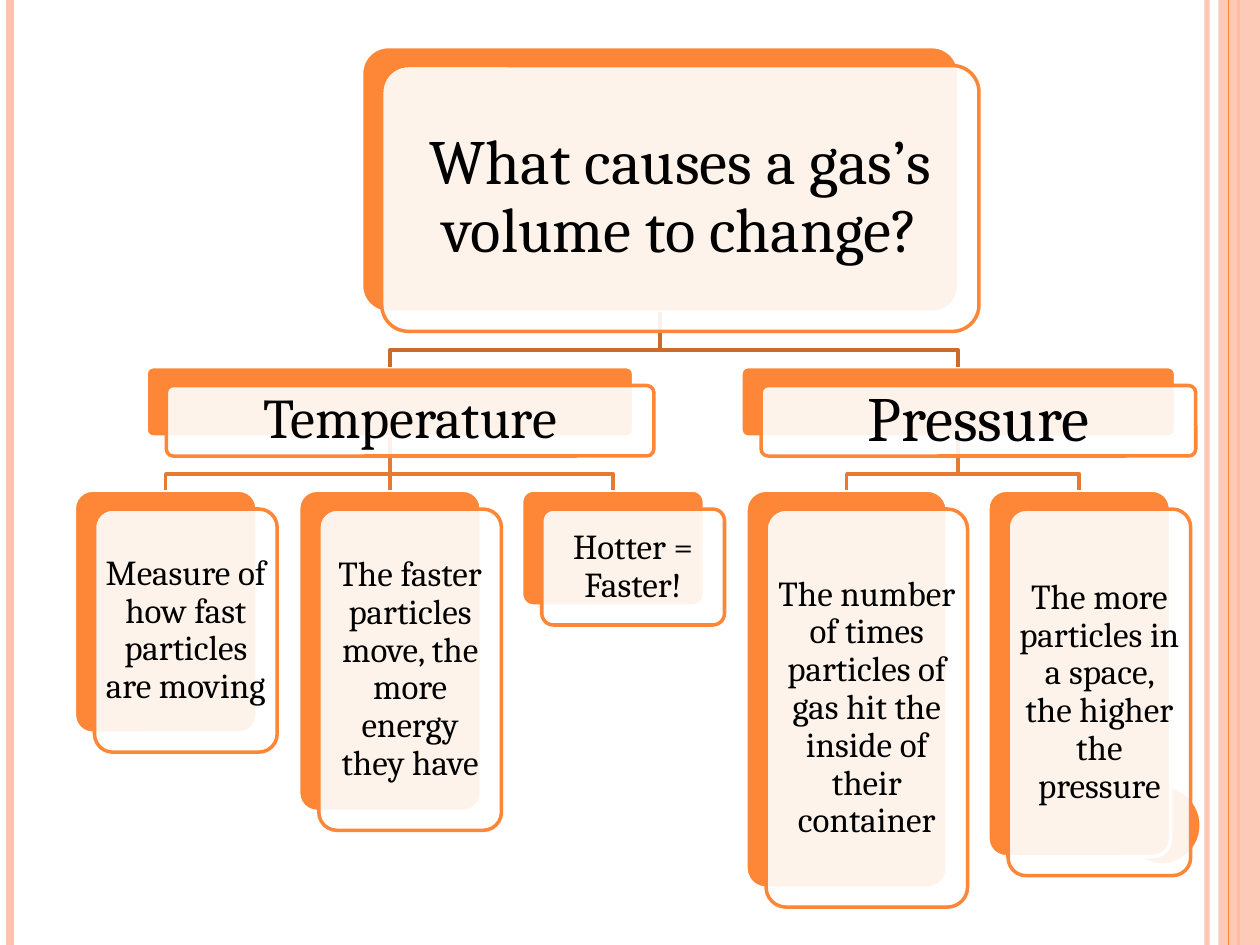
"""Build a slide with a tree of cards on what changes the volume of a gas."""
from dataclasses import dataclass
from typing import Optional

from lxml.etree import SubElement
from pptx import Presentation
from pptx.dml.color import RGBColor
from pptx.enum.shapes import MSO_CONNECTOR as Link, MSO_SHAPE as Preset
from pptx.enum.text import MSO_ANCHOR as Anchor, MSO_AUTO_SIZE as AutoSize, PP_ALIGN as Align
from pptx.oxml.ns import qn
from pptx.util import Inches, Pt

ORANGE = RGBColor(0xFE, 0x86, 0x37)
PEACH = RGBColor(0xFE, 0xC3, 0xAE)
UPPER_LINK = RGBColor(0xCB, 0x6B, 0x2C)
LOWER_LINK = RGBColor(0xE7, 0x7A, 0x32)
WHITE = RGBColor(0xFF, 0xFF, 0xFF)
BLACK = RGBColor(0, 0, 0)

FONT = "Cambria"
PAGE_WIDTH, PAGE_HEIGHT = 10, 7.5
SHIFT_X, SHIFT_Y = 0.16, 0.15
CORNER = 0.1
BEND = 0.13
LEAF_TOP = 3.89
BRANCH_TOP, BRANCH_HEIGHT = 2.91, 0.56


@dataclass
class Card:
    text: str
    left: float
    top: float
    width: float
    height: float
    size: int = 20
    inset: float = 0.08
    parent: Optional["Card"] = None

    @property
    def center(self) -> float:
        return self.left + self.width / 2

    @property
    def bottom(self) -> float:
        return self.top + self.height


@dataclass
class Rail:
    x: float
    color: RGBColor
    weight: float
    opacity: int = 100


ROOT = Card("What causes a gas’s volume to change?", 2.87, 0.37, 4.74, 2.11, 36, 0.15)
TEMPERATURE = Card("Temperature", 1.16, BRANCH_TOP, 3.87, BRANCH_HEIGHT, 32, 0.13, ROOT)
PRESSURE = Card("Pressure", 5.88, BRANCH_TOP, 3.45, BRANCH_HEIGHT, 36, 0.15, ROOT)


def leaf(text: str, left: float, width: float, height: float, parent: Card) -> Card:
    return Card(text, left, LEAF_TOP, width, height, parent=parent)


CARDS = [
    ROOT,
    TEMPERATURE,
    leaf("Measure of how fast particles are moving", 0.59, 1.45, 1.93, TEMPERATURE),
    leaf("The faster particles move, the more energy they have", 2.37, 1.45, 2.55, TEMPERATURE),
    leaf("Hotter = Faster!", 4.14, 1.45, 0.92, TEMPERATURE),
    PRESSURE,
    leaf("The number of times particles of gas hit the inside of their container",
         5.92, 1.6, 3.16, PRESSURE),
    leaf("The more particles in a space, the higher the pressure", 7.84, 1.45, 2.91, PRESSURE),
]
RAILS = [Rail(9.58, PEACH, 3, 93), Rail(0.08, PEACH, 4.5), Rail(9.83, ORANGE, 1.5)]
EDGE_RAIL = Rail(9.75, ORANGE, 0.75)


def set_opacity(shape, percent: int) -> None:
    color = next(shape.element.iter(qn("a:srgbClr")))
    SubElement(color, qn("a:alpha")).set("val", str(percent * 1000))


def add_line(page, x1: float, y1: float, x2: float, y2: float, color: RGBColor, weight: float):
    line = page.shapes.add_connector(Link.STRAIGHT, Inches(x1), Inches(y1), Inches(x2), Inches(y2))
    line.line.color.rgb = color
    line.line.width = Pt(weight)
    SubElement(line.element.spPr, qn("a:effectLst"))
    return line


def add_rail(page, rail: Rail) -> None:
    line = add_line(page, rail.x, 0, rail.x, PAGE_HEIGHT, rail.color, rail.weight)
    if rail.opacity < 100:
        set_opacity(line, rail.opacity)


def add_shape(page, preset, left: float, top: float, width: float, height: float,
              fill: RGBColor, outline: Optional[RGBColor] = None):
    shape = page.shapes.add_shape(preset, Inches(left), Inches(top), Inches(width), Inches(height))
    shape.shadow.inherit = False
    shape.fill.solid()
    shape.fill.fore_color.rgb = fill
    if outline is None:
        shape.line.fill.background()
    else:
        shape.line.color.rgb = outline
        shape.line.width = Pt(2)
    return shape


def add_back(page, card: Card):
    back = add_shape(page, Preset.ROUNDED_RECTANGLE, card.left, card.top,
                     card.width, card.height, ORANGE, WHITE)
    back.adjustments[0] = CORNER
    return back


def add_front(page, card: Card):
    front = add_shape(page, Preset.ROUNDED_RECTANGLE, card.left + SHIFT_X, card.top + SHIFT_Y,
                      card.width, card.height, WHITE, ORANGE)
    front.adjustments[0] = CORNER
    set_opacity(front, 90)
    return front


def write_text(shape, card: Card, corner_inset: float = 0) -> None:
    frame = shape.text_frame
    frame.word_wrap = True
    frame.auto_size = AutoSize.NONE
    frame.vertical_anchor = Anchor.MIDDLE
    margin = Inches(card.inset - corner_inset)
    frame.margin_left = frame.margin_right = frame.margin_top = frame.margin_bottom = margin
    para = frame.paragraphs[0]
    para.text = card.text
    para.alignment = Align.CENTER
    para.line_spacing = 0.9
    para.font.name = FONT
    para.font.size = Pt(card.size)
    para.font.color.rgb = BLACK


def add_link(page, card: Card, parent_box, child_box) -> None:
    parent = card.parent
    color = UPPER_LINK if parent is ROOT else LOWER_LINK
    if abs(card.center - parent.center) < 0.01:
        line = add_line(page, parent.center, parent.bottom, card.center, card.top, color, 2)
        line.begin_connect(parent_box, 2)
        line.end_connect(child_box, 0)
        return
    bend = card.top - BEND
    points = [(parent.center, bend), (card.center, bend), (card.center, card.top)]
    builder = page.shapes.build_freeform(Inches(parent.center), Inches(parent.bottom))
    builder.add_line_segments([(Inches(x), Inches(y)) for x, y in points], close=False)
    elbow = builder.convert_to_shape()
    elbow.shadow.inherit = False
    elbow.fill.background()
    elbow.line.color.rgb = color
    elbow.line.width = Pt(2)


def place_title(page, front) -> None:
    title = page.shapes.title
    title.left, title.top, title.width, title.height = (
        front.left, front.top, front.width, front.height)
    write_text(title, ROOT)
    page.shapes.element.append(title.element)


def main() -> None:
    deck = Presentation()
    deck.slide_width, deck.slide_height = Inches(PAGE_WIDTH), Inches(PAGE_HEIGHT)
    page = deck.slides.add_slide(deck.slide_layouts[5])
    for rail in RAILS:
        add_rail(page, rail)
    band = add_shape(page, Preset.RECTANGLE, 9.67, 0, 0.33, PAGE_HEIGHT, PEACH)
    set_opacity(band, 87)
    add_rail(page, EDGE_RAIL)
    add_shape(page, Preset.OVAL, 8.92, 6.25, 0.6, 0.6, ORANGE)

    backs = [add_back(page, card) for card in CARDS]
    for card, back in zip(CARDS, backs):
        if card.parent:
            add_link(page, card, backs[CARDS.index(card.parent)], back)
    for card in CARDS:
        front = add_front(page, card)
        if card is ROOT:
            place_title(page, front)
        else:
            write_text(front, card, 0.29 * CORNER * min(card.width, card.height))
    deck.save("out.pptx")


if __name__ == "__main__":
    main()
